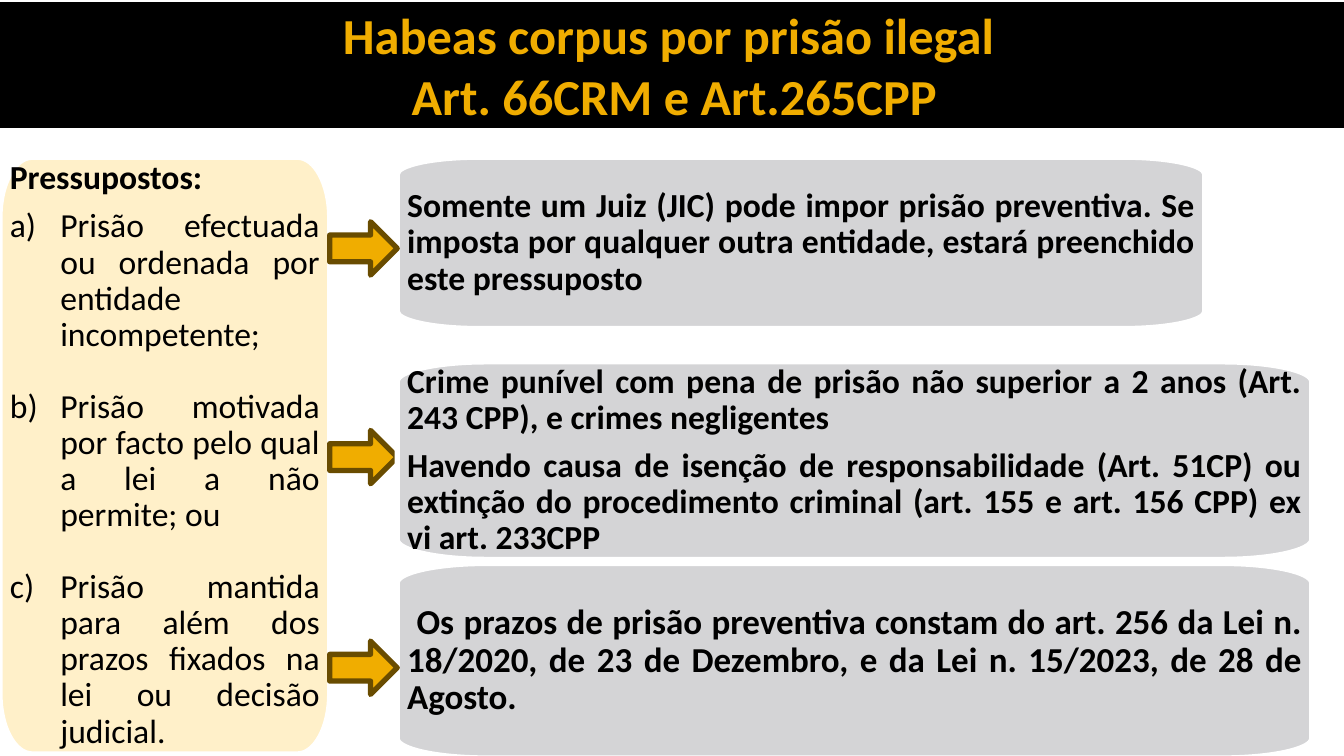
from lxml.etree import SubElement
from pptx import Presentation
from pptx.dml.color import RGBColor
from pptx.enum.shapes import MSO_SHAPE as Kind
from pptx.enum.text import MSO_ANCHOR as Anchor, MSO_AUTO_SIZE as Auto, PP_ALIGN as Align
from pptx.oxml.ns import qn
from pptx.util import Inches, Pt


def rgb(code):
    return RGBColor.from_string(code)


def panel(x, y, w, h, rx, fill, texts, size):
    ry = h / 10
    r, b = x + w, y + h
    kx, ky = rx * 0.45, ry * 0.45
    spots = [(x, y + ry),
             (x, y + ky), (x + kx, y), (x + rx, y), (r - rx, y),
             (r - kx, y), (r, y + ky), (r, y + ry), (r, b - ry),
             (r, b - ky), (r - kx, b), (r - rx, b), (x + rx, b),
             (x + kx, b), (x, b - ky), (x, b - ry)]
    spots = [(Inches(across), Inches(down)) for across, down in spots]
    pen = shapes.build_freeform(*spots[0], scale=1.0)
    pen.add_line_segments(spots[1:], close=True)
    shape = pen.convert_to_shape()
    lines = list(shape.element.iter(qn("a:lnTo")))
    for at in range(0, 16, 4):
        curve = SubElement(lines[at].getparent(), qn("a:cubicBezTo"))
        lines[at].addprevious(curve)
        for line in lines[at:at + 3]:
            curve.append(line[0])
            line.getparent().remove(line)
    shape.shadow.inherit = False
    shape.fill.solid()
    shape.fill.fore_color.rgb = rgb(fill)
    shape.line.color.rgb = rgb("FFFFFF")
    shape.line.width = Pt(3.78)
    frame = shape.text_frame
    frame.word_wrap = True
    frame.vertical_anchor = Anchor.MIDDLE
    frame.margin_left = frame.margin_right = Inches(0.1)
    frame.margin_top = frame.margin_bottom = Inches(0.1)
    frame.text = "\n".join(texts)
    for para in frame.paragraphs:
        para.alignment = Align.JUSTIFY
        para.line_spacing = 0.9
        para.space_after = Pt(8.4)
        for run in para.runs:
            run.font.name = "Calibri"
            run.font.size = Pt(size)
            run.font.bold = True
            run.font.color.rgb = rgb("000000")
    return shape


deck = Presentation()
deck.slide_width = Inches(13.33)
deck.slide_height = Inches(7.5)
slide = deck.slides.add_slide(deck.slide_layouts[5])
shapes = slide.shapes

title = shapes.title
title.left, title.top = Inches(0), Inches(0.02)
title.width, title.height = Inches(13.33), Inches(1.25)
title.fill.solid()
title.fill.fore_color.rgb = rgb("000000")
band = panel(0, 0.02, 13.33, 1.25, 0.21, "000000", [], 36)
form = next(band.element.iter(qn("a:custGeom")))
next(title.element.iter(qn("a:xfrm"))).addnext(form)
band.element.getparent().remove(band.element)

frame = title.text_frame
frame.auto_size = Auto.NONE
frame.word_wrap = True
frame.vertical_anchor = Anchor.MIDDLE
frame.margin_left = Inches(0.1)
frame.margin_right = frame.margin_top = frame.margin_bottom = Inches(0.05)
frame.text = "Habeas corpus por prisão ilegal \nArt. 66CRM e Art.265CPP"
for para in frame.paragraphs:
    para.alignment = Align.CENTER
    para.space_before = Pt(0)
    font = para.runs[0].font
    font.name = "Calibri"
    font.size = Pt(36)
    font.bold = True
    font.color.rgb = rgb("F0AD00")

grounds = panel(0, 1.56, 3.27, 5.92, 0.32, "FFF0C9", [
    "Pressupostos:",
    "Prisão efectuada ou ordenada por entidade incompetente;",
    "Prisão motivada por facto pelo qual a lei a não permite; ou",
    "Prisão mantida para além dos prazos fixados na lei ou decisão judicial.",
], 24)
for rank, para in enumerate(grounds.text_frame.paragraphs[1:]):
    para.runs[0].font.bold = False
    if rank:
        para.space_before = Pt(16.6)
    props = para._p.get_or_add_pPr()
    props.set("marL", str(Inches(0.5)))
    props.set("indent", str(-Inches(0.5)))
    SubElement(props, qn("a:buAutoNum"), type="alphaLcParenR")

notes = [
    (1.56, 8.01, 1.7, 0.8, 2.2, 24, [
        "Somente um Juiz (JIC) pode impor prisão preventiva. Se imposta por "
        "qualquer outra entidade, estará preenchido este pressuposto"]),
    (3.59, 9.07, 1.96, 0.88, 4.27, 24, [
        "Crime punível com pena de prisão não superior a 2 anos (Art. 243 CPP), "
        "e crimes negligentes",
        "Havendo causa de isenção de responsabilidade (Art. 51CP) ou extinção do "
        "procedimento criminal (art. 155 e art. 156 CPP) ex vi art. 233CPP"]),
    (5.59, 9.07, 1.93, 0.88, 6.36, 25, [
        " Os prazos de prisão preventiva constam do art. 256 da Lei n. 18/2020, "
        "de 23 de Dezembro, e da Lei n. 15/2023, de 28 de Agosto."]),
]
boxes, arrows = [], []
for top, wide, high, curve, mid, size, texts in notes:
    boxes.append(panel(3.94, top, wide, high, curve, "D4D4D6", texts, size))
    arrow = shapes.add_shape(Kind.RIGHT_ARROW, Inches(3.27), Inches(mid),
                             Inches(0.67), Inches(0.53))
    arrow.shadow.inherit = False
    arrow.fill.solid()
    arrow.fill.fore_color.rgb = rgb("F0AD00")
    arrow.line.color.rgb = rgb("694C00")
    arrow.line.width = Pt(3.78)
    arrows.append(arrow)
boxes[1].element.addprevious(arrows[1].element)

deck.save("out.pptx")
